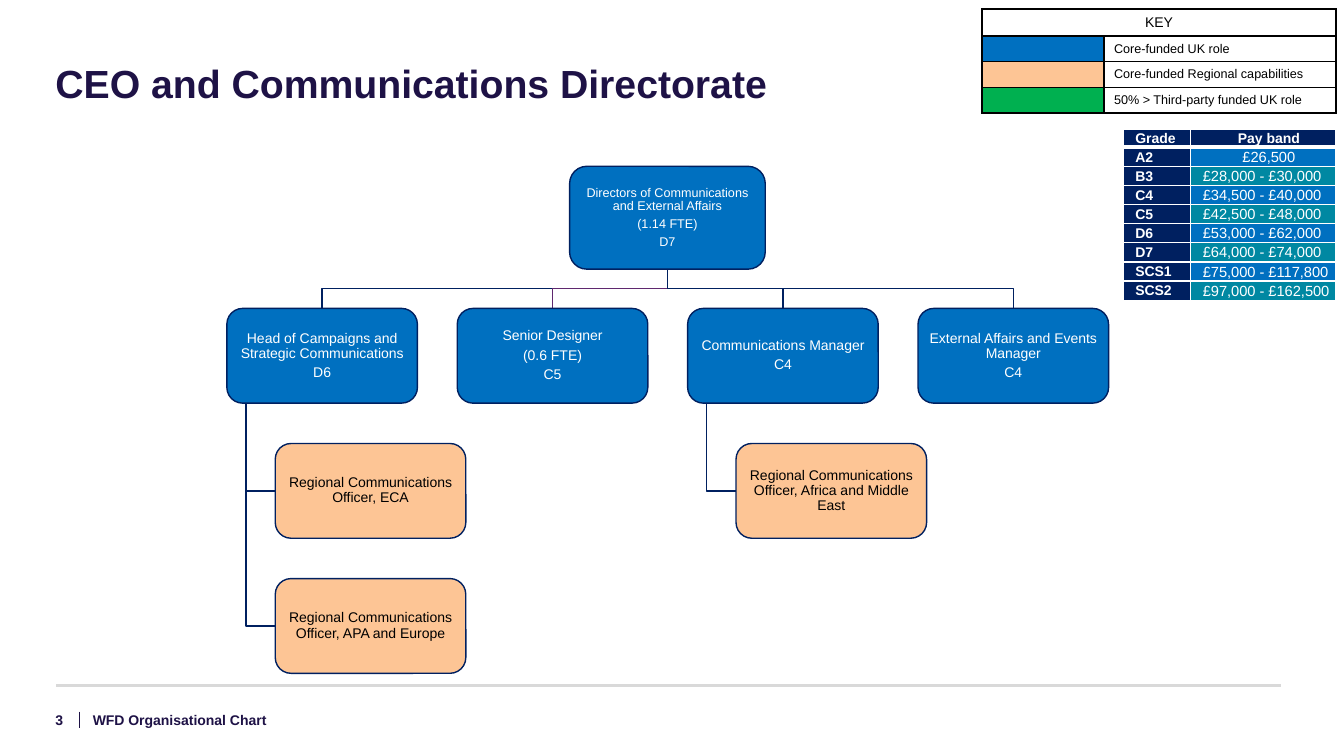
from dataclasses import dataclass

from lxml import etree
from pptx import Presentation
from pptx.dml.color import RGBColor
from pptx.enum.shapes import MSO_CONNECTOR, MSO_SHAPE
from pptx.enum.text import MSO_ANCHOR, PP_ALIGN
from pptx.oxml.ns import qn
from pptx.util import Inches, Pt

STRAIGHT = MSO_CONNECTOR.STRAIGHT
ROUNDED = MSO_SHAPE.ROUNDED_RECTANGLE
MIDDLE, TOP = MSO_ANCHOR.MIDDLE, MSO_ANCHOR.TOP
LEFT, CENTER = PP_ALIGN.LEFT, PP_ALIGN.CENTER
FONT = "Arial"
COLORS = {
    "title": "1E1246", "rule": "D9D9D9", "navy": "002060", "purple": "5F286F",
    "core": "0070C0", "regional": "FDC595", "third_party": "00B050",
    "teal": "0088A2", "white": "FFFFFF", "black": "000000",
}


@dataclass
class Role:
    lines: list[str]
    left: float
    top: float
    width: float = 1.89
    height: float = 0.94
    fill: str = "core"
    text_color: str = "white"
    size: float = 10

    @property
    def center(self) -> float:
        return self.left + self.width / 2

    @property
    def bottom(self) -> float:
        return self.top + self.height


@dataclass
class Manager:
    lines: list[str]
    reports: list[str]
    link_color: str = "navy"


MANAGERS = [
    Manager(["Head of Campaigns and Strategic Communications", "D6"],
            ["Regional Communications Officer, ECA",
             "Regional Communications Officer, APA and Europe"]),
    Manager(["Senior Designer", "(0.6 FTE)", "C5"], [], "purple"),
    Manager(["Communications Manager", "C4"],
            ["Regional Communications Officer, Africa and Middle East"]),
    Manager(["External Affairs and Events Manager", "C4"], []),
]
KEY = [("core", "Core-funded UK role"),
       ("regional", "Core-funded Regional capabilities"),
       ("third_party", "50% > Third-party funded UK role")]
PAY_BANDS = [("A2", "£26,500"), ("B3", "£28,000 - £30,000"),
             ("C4", "£34,500 - £40,000"), ("C5", "£42,500 - £48,000"),
             ("D6", "£53,000 - £62,000"), ("D7", "£64,000 - £74,000"),
             ("SCS1", "£75,000 - £117,800"), ("SCS2", "£97,000 - £162,500")]


def rgb(name: str) -> RGBColor:
    return RGBColor.from_string(COLORS[name])


def style_paragraph(paragraph, size: float, color: str, bold: bool = False, align=LEFT) -> None:
    paragraph.alignment = align
    for run in paragraph.runs:
        run.font.name, run.font.size, run.font.bold = FONT, Pt(size), bold
        run.font.color.rgb = rgb(color)


def set_margins(target, left: float, top: float, right: float, bottom: float) -> None:
    target.margin_left, target.margin_top = Inches(left), Inches(top)
    target.margin_right, target.margin_bottom = Inches(right), Inches(bottom)


def add_label(slide, text: str, box: tuple, size: float, anchor=MIDDLE, spacing: float = 1.0) -> None:
    frame = slide.shapes.add_textbox(*map(Inches, box)).text_frame
    frame.word_wrap, frame.vertical_anchor = True, anchor
    set_margins(frame, 0, 0, 0, 0)
    frame.text = text
    frame.paragraphs[0].line_spacing = spacing
    style_paragraph(frame.paragraphs[0], size, "title", True)


def add_rule(slide, ends: tuple, color: str, width: float) -> None:
    line = slide.shapes.add_connector(STRAIGHT, *map(Inches, ends))
    line.line.color.rgb, line.line.width = rgb(color), Pt(width)
    etree.SubElement(line._element.spPr, qn("a:effectLst"))


def add_link(slide, points: list[tuple[float, float]], color: str = "navy") -> None:
    corners = [(Inches(x), Inches(y)) for x, y in points]
    builder = slide.shapes.build_freeform(*corners[0])
    builder.add_line_segments(corners[1:], close=False)
    shape = builder.convert_to_shape()
    shape.shadow.inherit = False
    shape.fill.background()
    shape.line.color.rgb, shape.line.width = rgb(color), Pt(1)


def add_role(slide, role: Role) -> None:
    shape = slide.shapes.add_shape(
        ROUNDED, *map(Inches, (role.left, role.top, role.width, role.height)))
    shape.shadow.inherit = False
    shape.fill.solid()
    shape.fill.fore_color.rgb = rgb(role.fill)
    shape.line.color.rgb, shape.line.width = rgb("navy"), Pt(1)
    frame = shape.text_frame
    frame.word_wrap, frame.vertical_anchor = True, MIDDLE
    set_margins(frame, 0.01, 0.01, 0.01, 0.01)
    frame.text = "\n".join(role.lines)
    for paragraph in frame.paragraphs:
        paragraph.line_spacing, paragraph.space_after = 0.9, Pt(3)
        style_paragraph(paragraph, role.size, role.text_color, align=CENTER)


def add_table(slide, box: tuple, columns: list[float], rows: list[float]):
    shape = slide.shapes.add_table(len(rows), len(columns), *map(Inches, box))
    table = shape.table
    table.first_row = table.horz_banding = False
    for column, width in zip(table.columns, columns):
        column.width = Inches(width)
    for row, height in zip(table.rows, rows):
        row.height = Inches(height)
    return table


def fill_cell(cell, text: str, fill: str, border: str, size: float, color: str,
              bold: bool = False, align=LEFT, bottom_width: float = 1) -> None:
    cell.text, cell.vertical_anchor = text, MIDDLE
    cell.fill.solid()
    cell.fill.fore_color.rgb = rgb(fill)
    paragraph = cell.text_frame.paragraphs[0]
    style_paragraph(paragraph, size, color, bold, align)
    if not text:
        etree.SubElement(paragraph._p, qn("a:endParaRPr"), sz=str(size * 100))
    for index, side in enumerate(("lnL", "lnR", "lnT", "lnB")):
        width = bottom_width if side == "lnB" else 1
        line = etree.Element(qn(f"a:{side}"), w=str(Pt(width)))
        solid = etree.SubElement(line, qn("a:solidFill"))
        etree.SubElement(solid, qn("a:srgbClr"), val=COLORS[border])
        cell._tc.get_or_add_tcPr().insert(index, line)


def add_chart_of_roles(slide) -> None:
    director = Role(["Directors of Communications and External Affairs", "(1.14 FTE)", "D7"],
                    5.65, 1.65, 1.94, 1.02, size=9)
    roles = [director]
    row_top, row_pitch, column_pitch = 3.06, 1.34, 2.285
    for column, manager in enumerate(MANAGERS):
        head = Role(manager.lines, 2.25 + column * column_pitch, row_top)
        roles.append(head)
        middle = (director.bottom + head.top) / 2
        add_link(slide, [(director.center, director.bottom), (director.center, middle),
                         (head.center, middle), (head.center, head.top)], manager.link_color)
        trunk = head.left + 0.19
        for level, title in enumerate(manager.reports, 1):
            report = Role([title], head.left + 0.48, row_top + level * row_pitch,
                          fill="regional", text_color="black")
            roles.append(report)
            level_middle = report.top + report.height / 2
            add_link(slide, [(trunk, head.bottom), (trunk, level_middle),
                             (report.left, level_middle)])
    for role in roles:
        add_role(slide, role)


def add_key(slide) -> None:
    table = add_table(slide, (9.74, 0.09, 3.51, 1.04), [1.21, 2.3], [0.255] * 4)
    for cell, text in zip(table.rows[0].cells, ("KEY", "")):
        fill_cell(cell, text, "white", "black", 10, "black", align=CENTER)
    table.cell(0, 0).merge(table.cell(0, 1))
    for row, (color, meaning) in enumerate(KEY, 1):
        fill_cell(table.cell(row, 0), "", color, "black", 9, "black")
        fill_cell(table.cell(row, 1), meaning, "white", "black", 9, "black")


def add_pay_bands(slide) -> None:
    table = add_table(slide, (11.14, 1.28, 2.11, 1.7), [0.67, 1.44], [0.18] + [0.19] * 8)
    for column, (heading, align) in enumerate((("Grade", LEFT), ("Pay band", CENTER))):
        fill_cell(table.cell(0, column), heading, "navy", "white", 10, "white", True, align, 3)
    for row, (grade, band) in enumerate(PAY_BANDS, 1):
        fill_cell(table.cell(row, 0), grade, "navy", "white", 10, "white", True)
        fill_cell(table.cell(row, 1), band, "core" if row % 2 else "teal", "white", 10.5,
                  "white", align=CENTER if row == 1 else LEFT)
    for cell in table.iter_cells():
        set_margins(cell, 0.12, 0.01, 0.01, 0)


def main() -> None:
    presentation = Presentation()
    presentation.slide_width, presentation.slide_height = Inches(13.33), Inches(7.5)
    slide = presentation.slides.add_slide(presentation.slide_layouts[6])
    # Title and footer
    add_rule(slide, (0.79, 7.06, 0.79, 7.22), "title", 0.75)
    add_rule(slide, (0.56, 6.8, 12.71, 6.8), "rule", 2)
    add_label(slide, "CEO and Communications Directorate", (0.55, 0.64, 12.15, 1), 28, TOP, 0.9)
    add_label(slide, "WFD Organisational Chart", (0.92, 7.02, 5.08, 0.24), 10)
    add_label(slide, "3", (0.55, 7.02, 0.37, 0.24), 10)
    # Organisation chart
    add_chart_of_roles(slide)
    # Tables
    add_key(slide)
    add_pay_bands(slide)
    presentation.save("out.pptx")


if __name__ == "__main__":
    main()
